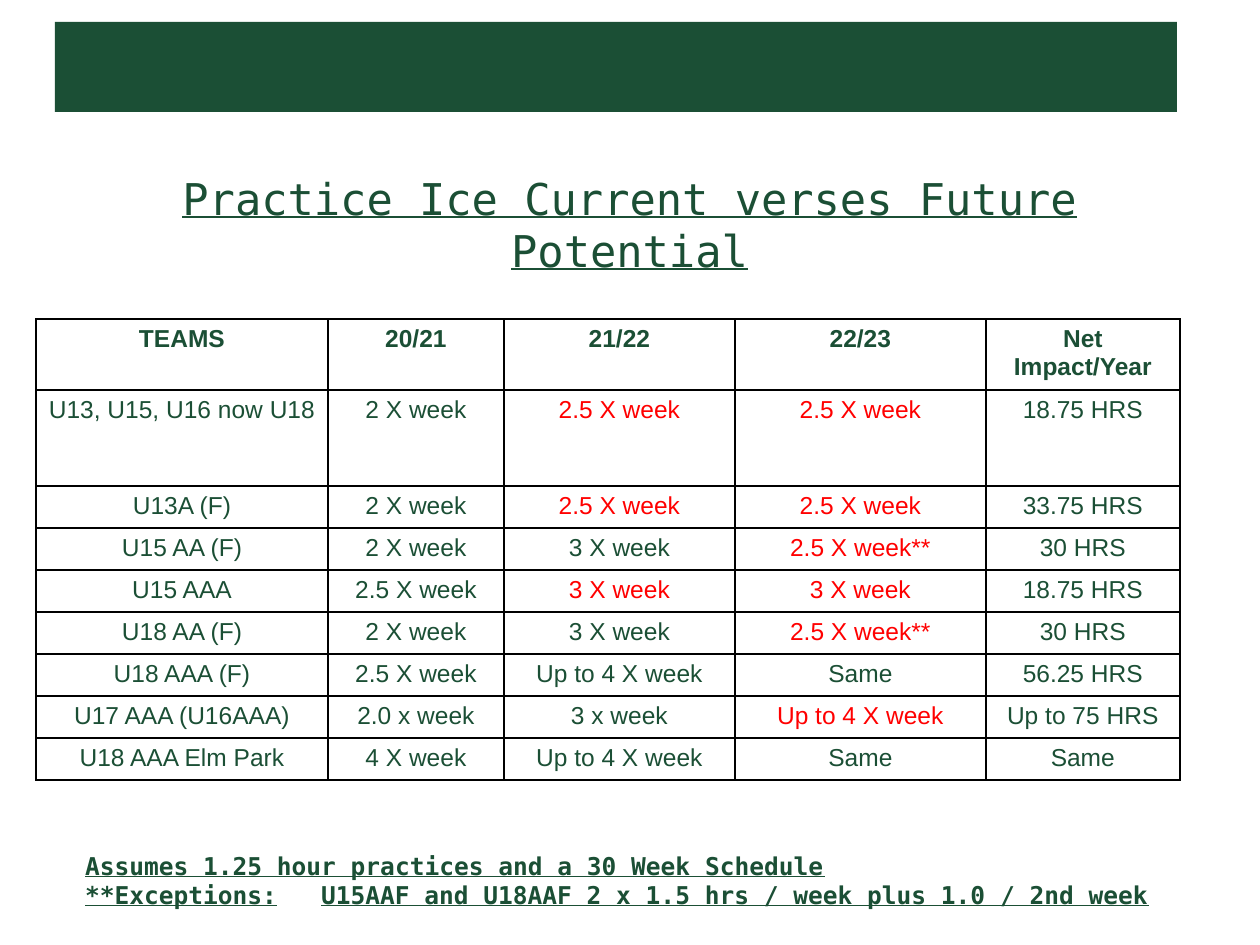
from dataclasses import dataclass

from lxml import etree
from pptx import Presentation
from pptx.dml.color import RGBColor
from pptx.enum.shapes import MSO_SHAPE
from pptx.enum.text import MSO_ANCHOR, MSO_AUTO_SIZE, PP_ALIGN
from pptx.oxml.ns import qn
from pptx.util import Emu, Pt

RECTANGLE = MSO_SHAPE.RECTANGLE
MIDDLE = MSO_ANCHOR.MIDDLE
NO_AUTOFIT = MSO_AUTO_SIZE.NONE
LEFT, CENTER = PP_ALIGN.LEFT, PP_ALIGN.CENTER


@dataclass(frozen=True)
class Theme:
    green: RGBColor = RGBColor(0x1B, 0x4F, 0x35)
    red: RGBColor = RGBColor(0xFF, 0, 0)
    border: str = "000000"
    mono: str = "DejaVu Sans Mono"
    sans: str = "Arial"
    title_size: int = 25
    body_size: int = 14


THEME = Theme()
SCALE = 914400 / 126


def px(n):
    return Emu(round(n * SCALE))


def add_run(p, text, font, size, color, bold=False, underline=False, align=CENTER):
    p.alignment = align
    r = p.add_run()
    r.text = text
    r.font.name = font
    r.font.size = Pt(size)
    r.font.color.rgb = color
    r.font.bold = bold
    r.font.underline = underline


prs = Presentation()
prs.slide_width, prs.slide_height = px(1260), px(945)
s = prs.slides.add_slide(prs.slide_layouts[5])

banner = s.shapes.add_shape(RECTANGLE, px(55), px(22), px(1122), px(90))
banner.shadow.inherit = False
banner.fill.solid()
banner.fill.fore_color.rgb = THEME.green
banner.line.fill.background()

title = s.shapes.title
title.left, title.top, title.width, title.height = px(79), px(191), px(1101), px(66)
note = s.shapes.add_textbox(px(79), px(846), px(1101), px(68))
for sp in (title, note):
    tf = sp.text_frame
    tf.word_wrap = True
    tf.auto_size = NO_AUTOFIT
    tf.vertical_anchor = MIDDLE
    tf.margin_left = tf.margin_right = tf.margin_top = tf.margin_bottom = px(6)

add_run(title.text_frame.paragraphs[0], "Practice Ice Current verses Future Potential",
        THEME.mono, THEME.title_size, THEME.green, underline=True)

NOTE_LINES = [
    "Assumes 1.25 hour practices and a 30 Week Schedule",
    "**Exceptions:\tU15AAF and U18AAF 2 x 1.5 hrs / week plus 1.0 / 2nd week",
]
tf = note.text_frame
for i, line in enumerate(NOTE_LINES):
    p = tf.add_paragraph() if i else tf.paragraphs[0]
    if "\t" in line:
        tabs = etree.SubElement(p._p.get_or_add_pPr(), qn("a:tabLst"))
        etree.SubElement(tabs, qn("a:tab"), pos=str(px(236)), algn="l")
    add_run(p, line, THEME.mono, THEME.body_size, THEME.green,
            bold=True, underline=True, align=LEFT)

ROWS = [
    ["TEAMS", "20/21", "21/22", "22/23", "Net Impact/Year"],
    ["U13, U15, U16 now U18", "2 X week", "2.5 X week", "2.5 X week", "18.75 HRS"],
    ["U13A (F)", "2 X week", "2.5 X week", "2.5 X week", "33.75 HRS"],
    ["U15 AA (F)", "2 X week", "3 X week", "2.5 X week**", "30 HRS"],
    ["U15 AAA", "2.5 X week", "3 X week", "3 X week", "18.75 HRS"],
    ["U18 AA (F)", "2 X week", "3 X week", "2.5 X week**", "30 HRS"],
    ["U18 AAA (F)", "2.5 X week", "Up to 4 X week", "Same", "56.25 HRS"],
    ["U17 AAA (U16AAA)", "2.0 x week", "3 x week", "Up to 4 X week", "Up to 75 HRS"],
    ["U18 AAA Elm Park", "4 X week", "Up to 4 X week", "Same", "Same"],
]
RED_CELLS = {(1, 2), (1, 3), (2, 2), (2, 3), (3, 3), (4, 2), (4, 3), (5, 3), (7, 3)}
COL_WIDTHS = [292, 176, 231, 251, 194]
ROW_HEIGHTS = [71, 96] + [42] * 7

table = s.shapes.add_table(len(ROWS), len(COL_WIDTHS), px(36), px(319),
                           px(sum(COL_WIDTHS)), px(sum(ROW_HEIGHTS))).table
table.first_row = table.horz_banding = False
for col, width in zip(table.columns, COL_WIDTHS):
    col.width = px(width)
for row, height in zip(table.rows, ROW_HEIGHTS):
    row.height = px(height)

for i, texts in enumerate(ROWS):
    for j, text in enumerate(texts):
        cell = table.cell(i, j)
        color = THEME.red if (i, j) in RED_CELLS else THEME.green
        add_run(cell.text_frame.paragraphs[0], text, THEME.sans, THEME.body_size,
                color, bold=i == 0)
        tc_pr = cell._tc.get_or_add_tcPr()
        for side in ("a:lnL", "a:lnR", "a:lnT", "a:lnB"):
            ln = etree.SubElement(tc_pr, qn(side), w=str(Pt(1)))
            fill = etree.SubElement(ln, qn("a:solidFill"))
            etree.SubElement(fill, qn("a:srgbClr"), val=THEME.border)
        cell.fill.background()

prs.save("out.pptx")
